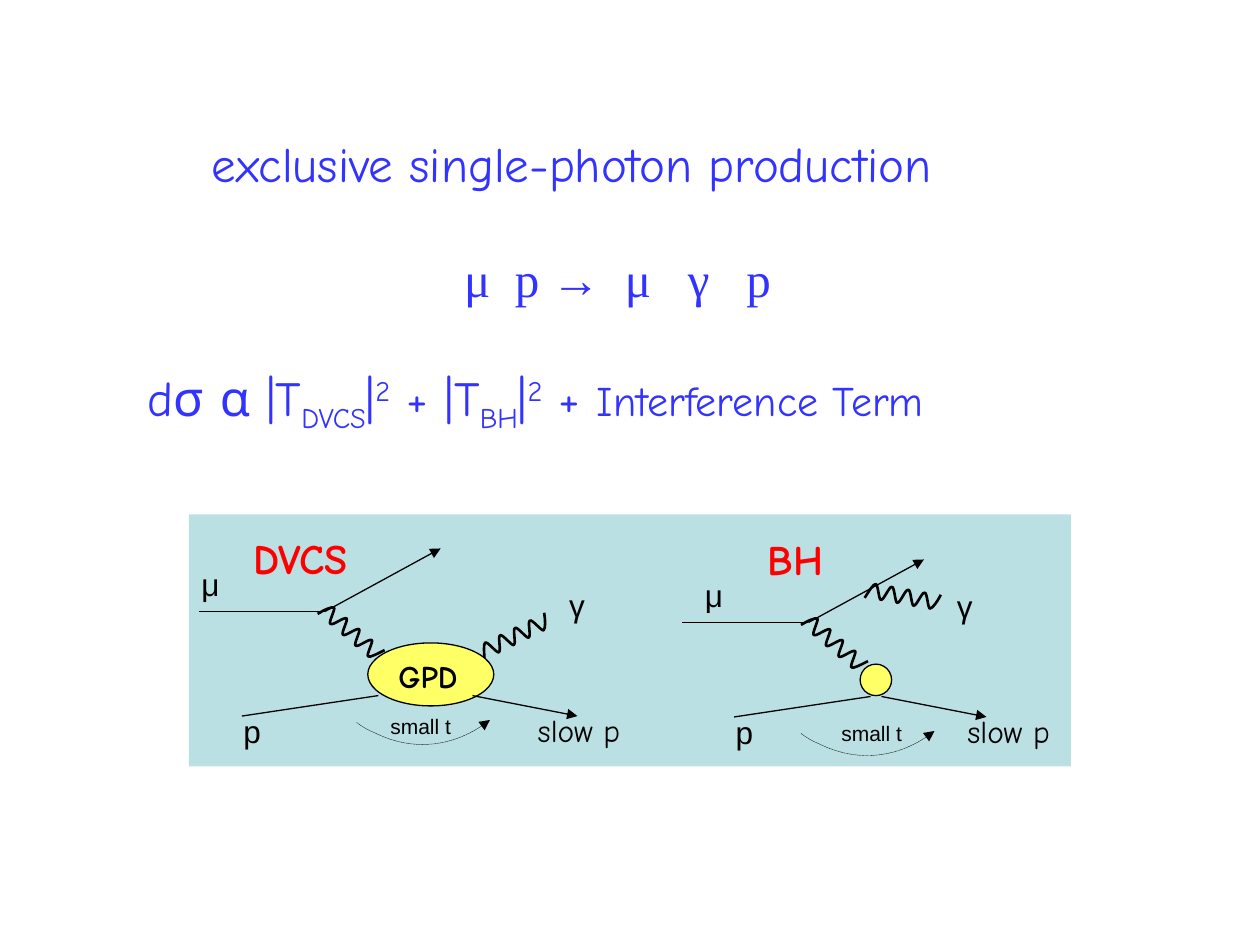
from math import cos, sin, radians

from lxml.etree import SubElement
from pptx import Presentation
from pptx.dml.color import RGBColor
from pptx.enum.dml import MSO_LINE as Dash
from pptx.enum.shapes import MSO_CONNECTOR as Connector, MSO_SHAPE as Shape
from pptx.enum.text import MSO_ANCHOR as Anchor, MSO_AUTO_SIZE as AutoSize, PP_ALIGN as Align
from pptx.oxml.ns import qn
from pptx.util import Pt

BLUE, BLACK, RED, YELLOW, PALE = "3333FF", "000000", "FF0000", "FFFF66", "BBE0E3"
COMIC, ARIAL, TIMES = "Comic Neue", "Arial", "Times New Roman"


def color(hex_string):
    return RGBColor.from_string(hex_string)


def add_run(para, text, size, font, ink, bold=False, baseline=0, spacing=0):
    span = para.add_run()
    span.text = text
    span.font.size, span.font.name, span.font.bold = Pt(size), font, bold
    span.font.color.rgb = color(ink)
    if baseline:
        span.font._element.set("baseline", str(baseline * 1000))
    if spacing:
        span.font._element.set("spc", str(spacing * 100))


def place(box, left, top, width, height):
    box.left, box.top, box.width, box.height = Pt(left), Pt(top), Pt(width), Pt(height)


def prepare_frame(box):
    frame = box.text_frame
    frame.word_wrap, frame.auto_size = True, AutoSize.NONE
    frame.vertical_anchor = Anchor.TOP
    frame.margin_left = frame.margin_right = frame.margin_top = frame.margin_bottom = 0
    return frame


def write_title(page, left, top, width, height):
    box = page.shapes.title
    place(box, left, top, width, height)
    para = prepare_frame(box).paragraphs[0]
    para.alignment = Align.LEFT
    add_run(para, "exclusive single-photon production", 28, COMIC, BLUE)


def write_formulas(page, left, top, width, height):
    box = page.placeholders[1]
    place(box, left, top, width, height)
    frame = prepare_frame(box)
    reaction, cross_section = frame.paragraphs[0], frame.add_paragraph()
    for para, gap, indent in ((reaction, 0, 181), (cross_section, 34, 0)):
        para.space_before = Pt(gap)
        props = para._p.get_or_add_pPr()
        props.set("marL", str(Pt(indent)))
        props.set("indent", "0")
        SubElement(props, qn("a:buNone"))
    for symbol, extra in (("μ", 7), ("p", 0), ("→", 7), ("μ", 14), ("γ", 14)):
        add_run(reaction, symbol, 28, TIMES, BLUE)
        add_run(reaction, " ", 28, TIMES, BLUE, spacing=extra)
    add_run(reaction, "p", 28, TIMES, BLUE)
    for text, size, baseline in (
        ("dσ α |T", 28, 0), ("DVCS", 28, -25), ("|", 28, 0), ("2", 28, 30),
        (" + |T", 28, 0), ("BH", 28, -25), ("|", 28, 0), ("2", 28, 30),
        (" + ", 28, 0), ("Interference Term", 24, 0),
    ):
        add_run(cross_section, text, size, COMIC, BLUE, baseline=baseline)


def add_label(page, left, top, width, height, text, size, font=ARIAL, ink=BLACK, bold=False):
    box = page.shapes.add_textbox(Pt(left), Pt(top), Pt(width), Pt(height))
    box.text_frame.word_wrap = False
    add_run(box.text_frame.paragraphs[0], text, size, font, ink, bold)


def add_filled(page, kind, left, top, width, height, fill, outlined=True):
    box = page.shapes.add_shape(kind, Pt(left), Pt(top), Pt(width), Pt(height))
    box.shadow.inherit = False
    box.fill.solid()
    box.fill.fore_color.rgb = color(fill)
    if outlined:
        style_line(box, 0.75)
    else:
        box.line.fill.background()


def style_line(item, width, arrow=None):
    item.line.color.rgb = color(BLACK)
    item.line.width = Pt(width)
    if arrow:
        SubElement(item.line._get_or_add_ln(), qn(f"a:{arrow}"), type="triangle")


def add_line(page, left, top, across, down, arrow=None):
    line = page.shapes.add_connector(
        Connector.STRAIGHT, Pt(left), Pt(top), Pt(left + across), Pt(top + down))
    style_line(line, 0.75, arrow)
    SubElement(line._element.spPr, qn("a:effectLst"))


def add_curve(page, left, top, segments, turn=0):
    c, s = cos(radians(turn)), sin(radians(turn))
    builder = page.shapes.build_freeform(Pt(left), Pt(top))
    builder.add_line_segments(
        [(Pt(left + x * c - y * s), Pt(top + x * s + y * c))
         for segment in segments for x, y in segment], close=False)
    curve = builder.convert_to_shape()
    outline = next(curve._element.iter(qn("a:path")))
    steps = outline.findall(qn("a:lnTo"))
    for first in range(0, len(steps), 3):
        bezier = SubElement(outline, qn("a:cubicBezTo"))
        for step in steps[first:first + 3]:
            bezier.append(step[0])
            outline.remove(step)
    curve.shadow.inherit = False
    curve.fill.background()
    return curve


def add_photon(page, left, top, turn=0):
    def shift(segment, x, y):
        return [(x + a, y + b) for a, b in segment]

    fall = ((0.9, 0.8), (-3.4, 8.7), (-2.1, 9.3))
    rise = ((-0.9, 10.6), (5.8, 5), (7.2, 6.2))
    tail = ((-1.2, 10.1), (2.9, 7.9), (7.3, 5.7))
    segments = [((3.6, -2.2), (7.9, -4.3), (9.4, -3.6))]
    for wave in range(4):
        crest = (9.4 + 7.2 * wave, -3.6 + 6.2 * wave)
        segments += [shift(fall, *crest), shift(tail if wave == 3 else rise, *crest)]
    style_line(add_curve(page, left, top, segments, turn), 1.5)


def draw_lepton(page, left, top):
    add_line(page, left + 72, top, 66, -36, "tailEnd")
    add_line(page, left, top, 72, 0)
    add_photon(page, left + 67.7, top + 1.4)


def draw_proton(page, left, top, exit_offset):
    add_line(page, left, top, 78, -11.7)
    add_line(page, left + exit_offset, top - 11.7, 60, 11.7, "tailEnd")
    add_label(page, left - 6.2, top - 5.8, 24.5, 28.8, "p", 18)


def draw_transfer(page, left, top):
    arc = add_curve(page, left, top, [
        ((-18.7, 15.1), (-44.6, 18), (-66.2, 7.2)),
        ((-69.8, 5.8), (-73.4, 3.6), (-76.3, 1.4))])
    arc.line.dash_style = Dash.ROUND_DOT
    style_line(arc, 0.25, "headEnd")


def draw_dvcs(page, left, top):
    draw_lepton(page, left + 5.8, top + 55.4)
    add_photon(page, left + 203, top + 56.2, 113.1)
    add_filled(page, Shape.OVAL, left + 102.2, top + 73.4, 72, 36, YELLOW)
    draw_proton(page, left + 30.2, top + 115.2, 131.8)
    draw_transfer(page, left + 172, top + 117.4)
    add_label(page, left + 29.7, top + 6.5, 87, 36, "DVCS ", 24, COMIC, RED, True)
    add_label(page, left, top + 25.5, 25.2, 28.8, "μ", 18)
    add_label(page, left + 210.2, top + 37.2, 21.6, 28.8, "γ", 18)
    add_label(page, left + 112.5, top + 77.9, 49.7, 28.8, "GPD", 18, COMIC, bold=True)
    add_label(page, left + 192.2, top + 108.6, 64.8, 28.8, "slow p", 18, COMIC)
    add_label(page, left + 108, top + 110.2, 49, 21.6, "small t", 12)


def draw_bh(page, left, top):
    draw_lepton(page, left + 5.8, top + 55.4)
    add_photon(page, left + 153.4, top + 39.6, 149.3)
    add_filled(page, Shape.OVAL, left + 107.3, top + 79.2, 18, 18, YELLOW)
    draw_proton(page, left + 35.3, top + 109.4, 84.2)
    draw_transfer(page, left + 149.8, top + 117.4)
    add_label(page, left + 47.5, top + 1, 48.2, 36, "BH", 24, COMIC, RED, True)
    add_label(page, left + 11.5, top + 25.2, 25.2, 28.8, "μ", 18)
    add_label(page, left + 155.5, top + 31.7, 21.6, 28.8, "γ", 18)
    add_label(page, left + 161.5, top + 103, 64.8, 28.8, "slow p", 18, COMIC)
    add_label(page, left + 89.5, top + 108, 49, 21.6, "small t", 12)


def draw_panel(page, left, top, width, height):
    add_filled(page, Shape.RECTANGLE, left, top, width, height, PALE, outlined=False)
    draw_dvcs(page, left, top)
    draw_bh(page, left + 276.2, top + 6.3)


def main():
    deck = Presentation()
    deck.slide_width, deck.slide_height = Pt(720), Pt(540)
    page = deck.slides.add_slide(deck.slide_layouts[1])
    write_title(page, 121, 76, 480, 36)
    write_formulas(page, 84.2, 142.2, 560, 104)
    draw_panel(page, 108, 294, 504, 144)
    deck.save("out.pptx")


if __name__ == "__main__":
    main()
